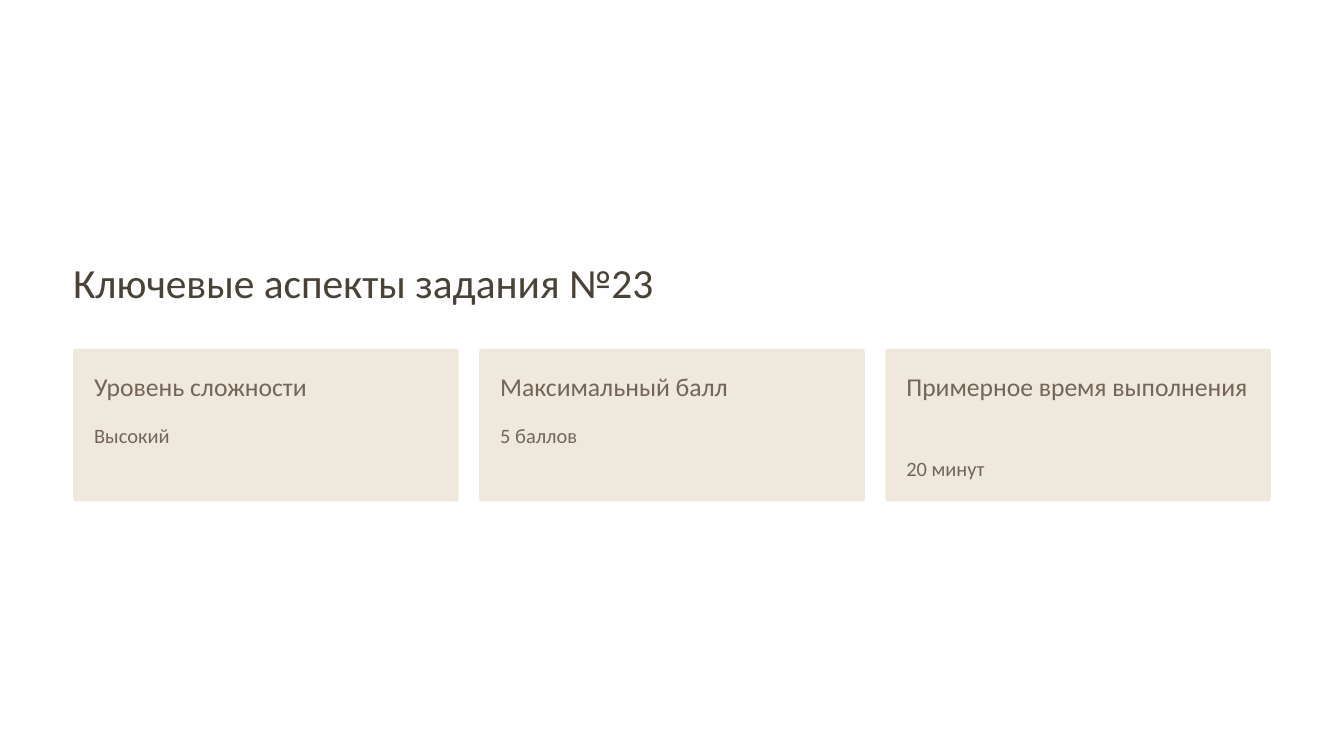
from pptx import Presentation
from pptx.dml.color import RGBColor
from pptx.enum.shapes import MSO_SHAPE
from pptx.util import Inches, Pt

ROUNDED = MSO_SHAPE.ROUNDED_RECTANGLE
COLORS = {"title": "484237", "card": "EEE8DD", "text": "746558"}
FONT = "Calibri"

deck = Presentation()
deck.slide_width = Inches(16)
deck.slide_height = Inches(9)
page = deck.slides.add_slide(deck.slide_layouts[6])


def add_text(text, left, top, width, height, size, spacing, color, wrap=False):
    box = page.shapes.add_textbox(Inches(left), Inches(top), Inches(width), Inches(height))
    frame = box.text_frame
    frame.margin_left = frame.margin_right = frame.margin_top = frame.margin_bottom = 0
    frame.word_wrap = wrap
    para = frame.paragraphs[0]
    para.line_spacing = Pt(spacing)
    span = para.add_run()
    span.text = text
    span.font.name = FONT
    span.font.size = Pt(size)
    span.font.color.rgb = RGBColor.from_string(COLORS[color])


add_text("Ключевые аспекты задания №23", 0.87, 3.03, 8.07, 0.62, 35.5, 44.5, "title")

cards = [
    ("Уровень сложности", "Высокий", 3.1, 1),
    ("Максимальный балл", "5 баллов", 3.14, 1),
    ("Примерное время выполнения", "20 минут", 4.09, 2),
]
CARD_LEFT, CARD_TOP, CARD_WIDTH, CARD_HEIGHT = 0.87, 4.15, 4.59, 1.82
CARD_STEP = 4.835
PADDING = 0.25
HEADING_LINE = 0.39

for index, (heading, value, heading_width, lines) in enumerate(cards):
    left = CARD_LEFT + index * CARD_STEP
    card = page.shapes.add_shape(
        ROUNDED, Inches(left), Inches(CARD_TOP), Inches(CARD_WIDTH), Inches(CARD_HEIGHT)
    )
    card.adjustments[0] = 0.02
    card.shadow.inherit = False
    card.fill.solid()
    card.fill.fore_color.rgb = RGBColor.from_string(COLORS["card"])
    card.line.fill.background()

    text_left = left + PADDING
    heading_top = CARD_TOP + PADDING
    heading_height = lines * HEADING_LINE
    value_top = heading_top + heading_height + 0.14
    add_text(heading, text_left, heading_top, heading_width, heading_height,
             22, 27.5, "text", wrap=lines > 1)
    add_text(value, text_left, value_top, CARD_WIDTH - 2 * PADDING, 0.4, 17.5, 28.5, "text")

deck.save("out.pptx")
